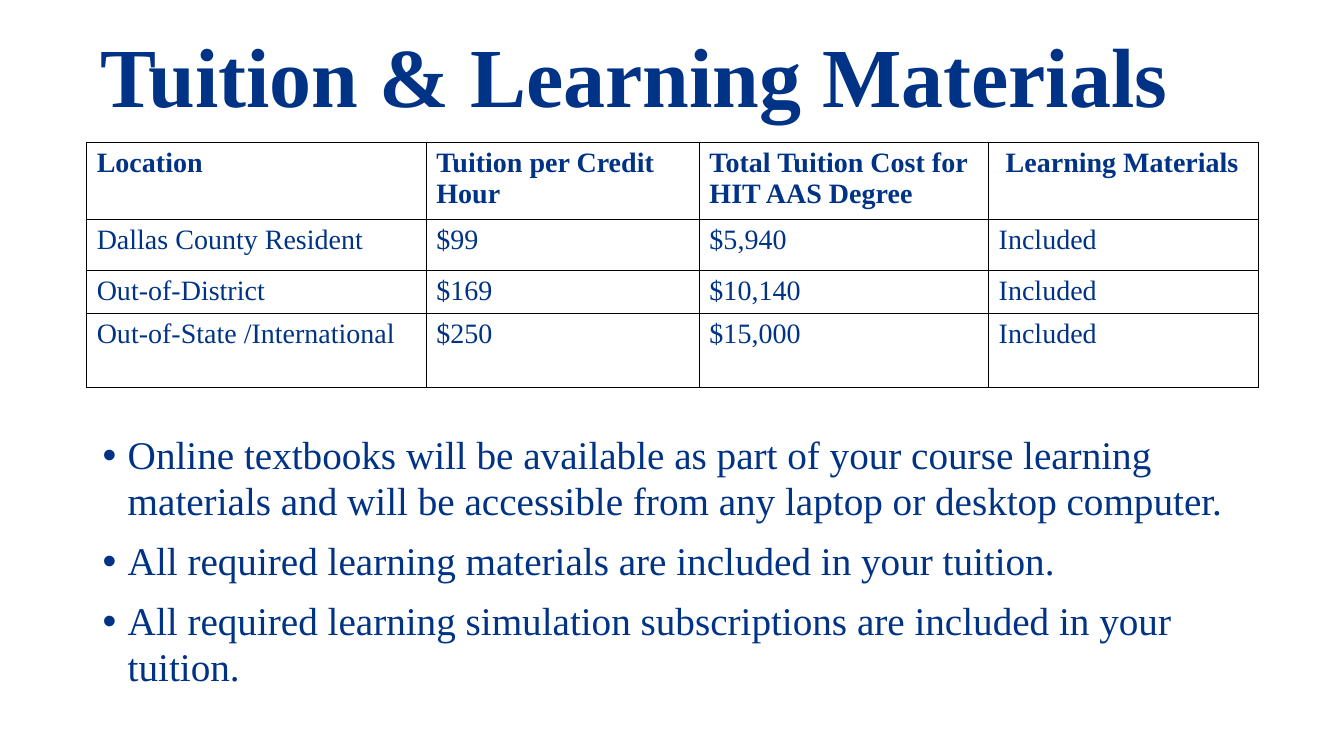
from dataclasses import dataclass

from lxml.etree import SubElement as Sub
from pptx import Presentation
from pptx.dml.color import RGBColor as Rgb
from pptx.enum.text import MSO_ANCHOR as Anchor, PP_ALIGN as Align
from pptx.oxml.ns import qn
from pptx.util import Pt


@dataclass(frozen=True)
class Theme:
    """Colours, font and type sizes of the slide."""
    ink: Rgb = Rgb(0x00, 0x33, 0x85)
    rule: str = "000000"
    font: str = "Times New Roman"
    title: int = 60
    body: int = 28
    cell: int = 20


THEME = Theme()
COLS = (242.6, 195.1, 206.6, 193)
ROWS = (51.4, 36.2, 29.8, 52.4)
COSTS = (
    ("Location", "Tuition per Credit Hour",
     "Total Tuition Cost for HIT AAS Degree", " Learning Materials"),
    ("Dallas County Resident", "$99", "$5,940", "Included"),
    ("Out-of-District", "$169", "$10,140", "Included"),
    ("Out-of-State /International", "$250", "$15,000", "Included"),
)
NOTES = (
    "Online textbooks will be available as part of your course learning "
    "materials and will be accessible from any laptop or desktop computer.",
    "All required learning materials are included in your tuition.",
    "All required learning simulation subscriptions are included in your tuition.",
)


def write(para, text, size, bold=False, align=Align.LEFT, line=None, before=0):
    """Put formatted text in a paragraph."""
    para.alignment = align
    para.space_before = Pt(before)
    if line:
        para.line_spacing = line
    run = para.add_run()
    run.text = text
    run.font.name = THEME.font
    run.font.size = Pt(size)
    run.font.bold = bold
    run.font.color.rgb = THEME.ink


def frame(slide, box, anchor=Anchor.TOP):
    """Add a wrapping text box and return its frame."""
    text = slide.shapes.add_textbox(*map(Pt, box)).text_frame
    text.word_wrap = True
    text.vertical_anchor = anchor
    return text


def bullet(para, indent):
    """Give a paragraph a hanging bullet."""
    props = para._p.get_or_add_pPr()
    props.set("marL", str(Pt(indent)))
    props.set("indent", str(-Pt(indent)))
    Sub(props, qn("a:buFont"), typeface="Arial")
    Sub(props, qn("a:buChar"), char="•")


def border(cell):
    """Draw a thin rule on each side of a cell."""
    props = cell._tc.get_or_add_tcPr()
    for at, side in enumerate(("lnL", "lnR", "lnT", "lnB")):
        line = Sub(props, qn(f"a:{side}"), w=str(Pt(1)))
        Sub(Sub(line, qn("a:solidFill")), qn("a:srgbClr"), val=THEME.rule)
        props.insert(at, line)


def heading(slide, box):
    """Place the slide title."""
    text = frame(slide, box, Anchor.MIDDLE)
    write(text.paragraphs[0], "Tuition & Learning Materials", THEME.title,
          bold=True, align=Align.CENTER, line=0.98)


def costs(slide, box):
    """Place the tuition table."""
    table = slide.shapes.add_table(len(ROWS), len(COLS), *map(Pt, box)).table
    table.first_row = True
    table.horz_banding = False
    for col, width in zip(table.columns, COLS):
        col.width = Pt(width)
    for at, (row, height) in enumerate(zip(table.rows, ROWS)):
        row.height = Pt(height)
        for cell, text in zip(row.cells, COSTS[at]):
            cell.fill.background()
            border(cell)
            write(cell.text_frame.paragraphs[0], text, THEME.cell, bold=at == 0)


def notes(slide, box):
    """Place the bullet list."""
    text = frame(slide, box)
    for at, note in enumerate(NOTES):
        para = text.add_paragraph() if at else text.paragraphs[0]
        bullet(para, 18)
        write(para, note, THEME.body, line=0.98, before=10 if at else 0)


def main():
    """Build and save the slide."""
    deck = Presentation()
    deck.slide_width, deck.slide_height = Pt(960), Pt(540)
    slide = deck.slides.add_slide(deck.slide_layouts[6])
    heading(slide, (11.5, -7.2, 882.7, 126))
    costs(slide, (61.9, 101.5, sum(COLS), sum(ROWS)))
    notes(slide, (66.2, 305.3, 828, 199.4))
    deck.save("out.pptx")


if __name__ == "__main__":
    main()
